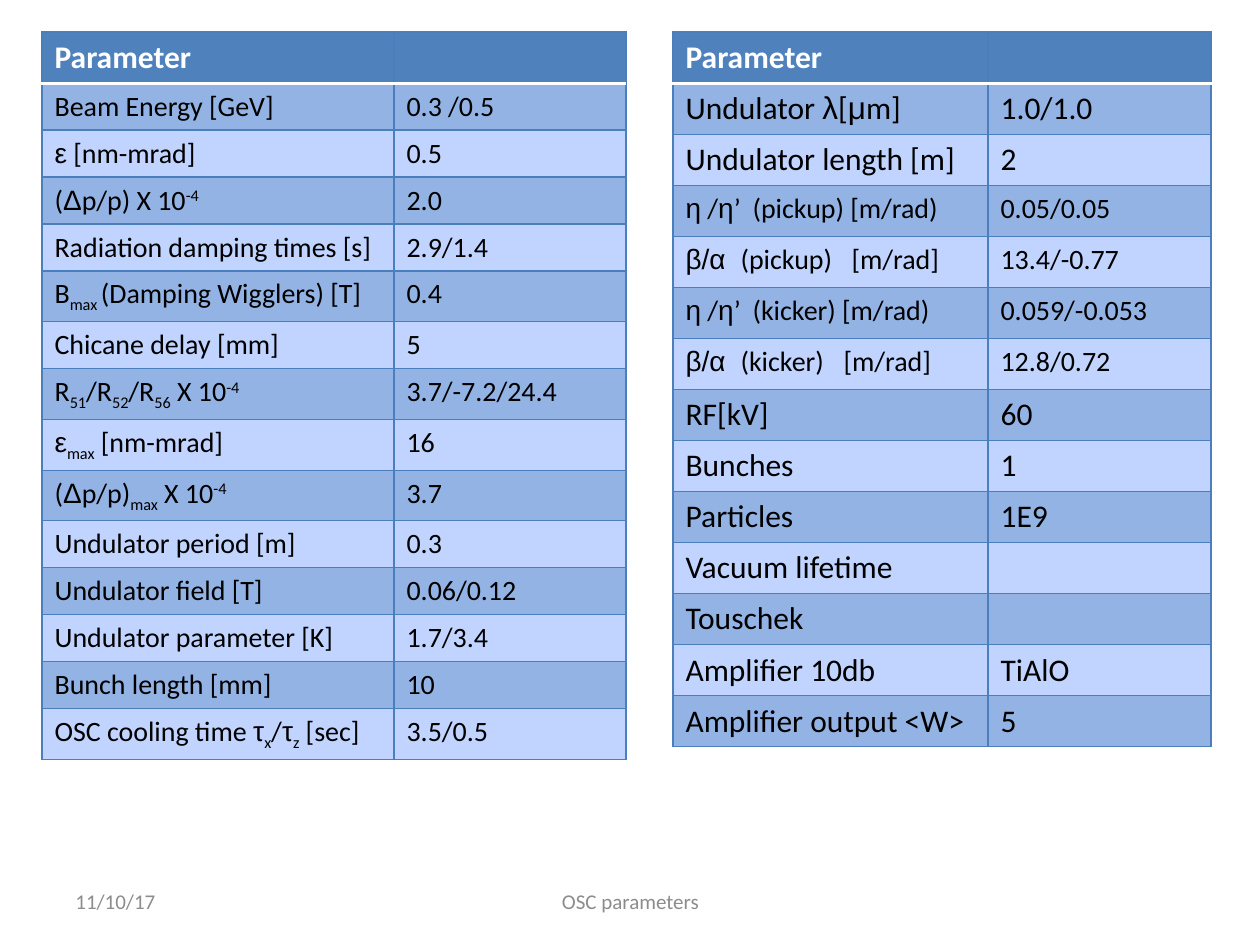
from dataclasses import dataclass

from lxml.etree import SubElement
from pptx import Presentation
from pptx.dml.color import RGBColor
from pptx.enum.text import MSO_ANCHOR, PP_ALIGN
from pptx.oxml import parse_xml
from pptx.oxml.ns import nsdecls, qn
from pptx.util import Pt

EMU_PER_PX = 914400 // 126


def px(n):
    return n * 914400 // 126


@dataclass(frozen=True)
class Theme:
    header: str = "4F81BD"
    dark_band: str = "93B3E5"
    light_band: str = "C0D4FF"
    grid: str = "4B7EBC"
    white: str = "FFFFFF"
    text: str = "000000"
    footer: str = "8C8C8C"
    font: str = "Calibri"
    greek_font: str = "Arial"
    large: int = 18
    body: int = 16
    small: int = 12


# Marks inside cell text: ~subscript~, ^superscript^, `greek font`
MARKS = "~^`"
BASELINES = {"~": "-25000", "^": "30000"}


def split_marks(text):
    """Yield (piece, mark) pairs; mark is empty for plain text."""
    mark, piece = "", ""
    for ch in text:
        if ch in MARKS:
            if piece:
                yield piece, mark
            mark, piece = ("" if mark else ch), ""
        else:
            piece += ch
    if piece:
        yield piece, mark


class Slide:
    def __init__(self, prs, theme):
        self.s = prs.slides.add_slide(prs.slide_layouts[6])
        self.theme = theme

    def style(self, r, size, color, bold=False, font=None):
        r.font.name = font or self.theme.font
        r.font.size = Pt(size)
        r.font.bold = bold
        r.font.color.rgb = RGBColor.from_string(color)

    def label(self, x, y, w, h, text, align):
        tf = self.s.shapes.add_textbox(px(x), px(y), px(w), px(h)).text_frame
        tf.word_wrap = True
        tf.vertical_anchor = MSO_ANCHOR.MIDDLE
        tf.text = text
        p = tf.paragraphs[0]
        p.alignment = align
        self.style(p.runs[0], self.theme.small, self.theme.footer)

    def rich_text(self, p, text, size, color, bold, stops):
        if stops:
            tabs = SubElement(p._p.get_or_add_pPr(), qn("a:tabLst"))
            for stop in stops:
                SubElement(tabs, qn("a:tab"), pos=str(px(stop)), algn="l")
        for piece, mark in split_marks(text):
            r = p.add_run()
            r.text = piece
            font = self.theme.greek_font if mark == "`" else None
            self.style(r, size, color, bold, font)
            if mark in BASELINES:
                r.font._element.set("baseline", BASELINES[mark])

    def borders(self, cell, row):
        t = self.theme
        lines = {side: (t.grid, 0.75) for side in "LRTB"}
        if row < 2:  # white rule between the header and the body
            lines["B" if row == 0 else "T"] = (t.white, 2)
        tc_pr = cell._tc.get_or_add_tcPr()
        for i, (side, (color, width)) in enumerate(lines.items()):
            tc_pr.insert(i, parse_xml(
                f'<a:ln{side} {nsdecls("a")} w="{Pt(width)}"><a:solidFill>'
                f'<a:srgbClr val="{color}"/></a:solidFill></a:ln{side}>'))

    def table(self, x, y, widths, row_h, rows):
        t = self.theme
        rows = [("Parameter", "", t.large)] + rows
        table = self.s.shapes.add_table(
            len(rows), len(widths), px(x), px(y),
            px(sum(widths)), px(row_h * len(rows))).table
        for col, w in zip(table.columns, widths):
            col.width = px(w)
        for i, (name, value, size, *stops) in enumerate(rows):
            table.rows[i].height = px(row_h)
            fill = t.header if i == 0 else t.dark_band if i % 2 else t.light_band
            color = t.text if i else t.white
            for j, text in enumerate((name, value)):
                cell = table.cell(i, j)
                cell.fill.solid()
                cell.fill.fore_color.rgb = RGBColor.from_string(fill)
                self.borders(cell, i)
                self.rich_text(cell.text_frame.paragraphs[0], text, size,
                               color, i == 0, stops if j == 0 else [])


def main():
    prs = Presentation()
    prs.slide_width, prs.slide_height = px(1260), px(945)
    theme = Theme()
    slide = Slide(prs, theme)
    body, large = theme.body, theme.large

    # Ring and beam parameters
    ring = [
        ("Beam Energy [GeV]", "0.3 /0.5"),
        ("`ε` [nm-mrad]", "0.5"),
        ("(`Δ`p/p) X 10^-4^", "2.0"),
        ("Radiation damping times [s]", "2.9/1.4"),
        ("B~max ~(Damping Wigglers) [T]", "0.4"),
        ("Chicane delay [mm]", "5"),
        ("R~51~/R~52~/R~56~ X 10^-4^", "3.7/-7.2/24.4"),
        ("`ε`~max~ [nm-mrad]", "16"),
        ("(`Δ`p/p)~max~ X 10^-4^", "3.7"),
        ("Undulator period [m]", "0.3"),
        ("Undulator field [T]", "0.06/0.12"),
        ("Undulator parameter [K]", "1.7/3.4"),
        ("Bunch length [mm]", "10"),
        ("OSC cooling time `τ`~x~/`τ`~z~ [sec]", "3.5/0.5"),
    ]
    slide.table(42, 32, (352, 232), 47, [(*row, body) for row in ring])

    # Undulator, optics and amplifier parameters; trailing numbers are tab stops
    slide.table(673, 32, (315, 223), 51, [
        ("Undulator `λ`[`μ`m]", "1.0/1.0", large),
        ("Undulator length [m]", "2", large),
        ("`η` /`η`’\t(pickup) [m/rad)", "0.05/0.05", body, 67),
        ("`β/α`\t(pickup)\t[m/rad]", "13.4/-0.77", body, 55, 166),
        ("`η` /`η`’\t(kicker) [m/rad)", "0.059/-0.053", body, 67),
        ("`β/α`\t(kicker)\t[m/rad]", "12.8/0.72", body, 55, 158),
        ("RF[kV]", "60", large),
        ("Bunches", "1", large),
        ("Particles", "1E9", large),
        ("Vacuum lifetime", "", large),
        ("Touschek", "", large),
        ("Amplifier 10db", "TiAlO", large),
        ("Amplifier output <W>", "5", large),
    ])

    # Footer
    slide.label(63, 876, 294, 50, "11/10/17", PP_ALIGN.LEFT)
    slide.label(431, 876, 399, 50, "OSC parameters", PP_ALIGN.CENTER)

    prs.save("out.pptx")


if __name__ == "__main__":
    main()
